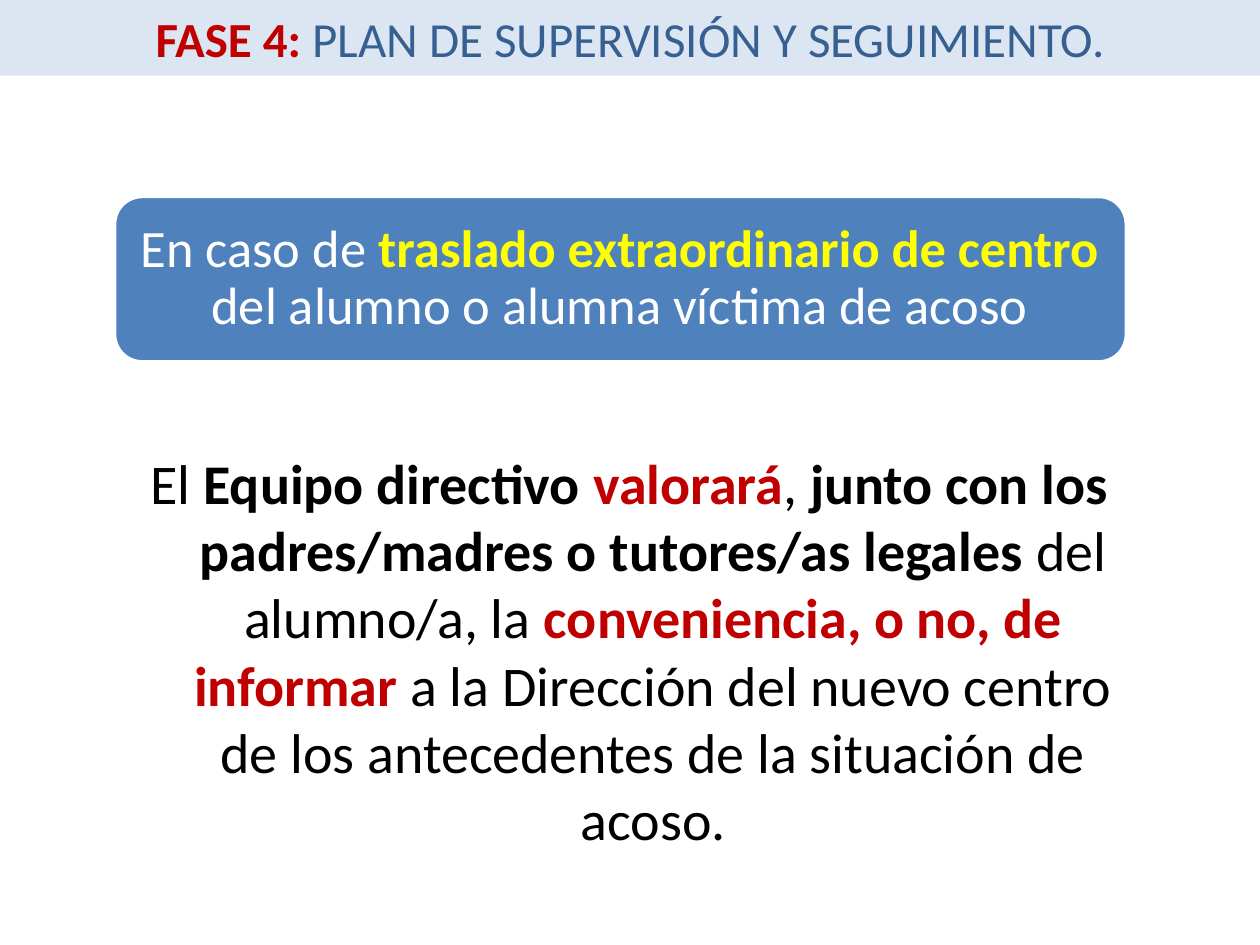
from pptx import Presentation
from pptx.dml.color import RGBColor as RGB
from pptx.enum.shapes import MSO_SHAPE as Kind
from pptx.enum.text import MSO_ANCHOR as Anchor, PP_ALIGN as Align
from pptx.util import Inches, Pt

WHITE = RGB(0xFF, 0xFF, 0xFF)
BLACK = RGB(0x00, 0x00, 0x00)
RED = RGB(0xC0, 0x00, 0x00)
YELLOW = RGB(0xFF, 0xFF, 0x00)
PALE = RGB(0xDC, 0xE6, 0xF2)
NAVY = RGB(0x37, 0x60, 0x92)
BLUE = RGB(0x4F, 0x81, 0xBD)
WIDE, HIGH = Inches(10), Inches(7.5)


class Deck:
    font = "Calibri"

    def __init__(self):
        self.prs = Presentation()
        self.prs.slide_width, self.prs.slide_height = WIDE, HIGH
        self.slide = self.prs.slides.add_slide(self.prs.slide_layouts[6])

    def place(self, x, y, w, h):
        return [int(part * size / 100) for part, size in zip((x, y, w, h), (WIDE, HIGH) * 2)]

    def panel(self, kind, area, fill, edge=None):
        shape = self.slide.shapes.add_shape(kind, *self.place(*area))
        shape.shadow.inherit = False
        shape.fill.solid()
        shape.fill.fore_color.rgb = fill
        if edge:
            shape.line.color.rgb = edge
            shape.line.width = Pt(2)
        else:
            shape.line.fill.background()
        return shape

    def label(self, area):
        return self.slide.shapes.add_textbox(*self.place(*area))

    def prose(self, shape, size, runs, frame={}, para={}, hang=0):
        box = shape.text_frame
        line = box.paragraphs[0]
        for item, look in ((box, {"word_wrap": True, **frame}),
                           (line, {"alignment": Align.CENTER, **para})):
            for name, value in look.items():
                setattr(item, name, value)
        if hang:
            props = line._p.get_or_add_pPr()
            props.set("marL", str(Inches(hang)))
            props.set("indent", str(-Inches(hang)))
        for text, color, bold in runs:
            run = line.add_run()
            run.text = text
            look = {"name": self.font, "size": Pt(size), "bold": bold}
            for name, value in look.items():
                setattr(run.font, name, value)
            run.font.color.rgb = color


def main():
    deck = Deck()
    middle = {"vertical_anchor": Anchor.MIDDLE}

    body = deck.label((10.6, 46.8, 78.7, 45.6))
    deck.prose(body, 32, [
        ("El ", BLACK, False),
        ("Equipo directivo ", BLACK, True),
        ("valorará", RED, True),
        (", ", BLACK, False),
        ("junto con los padres/madres o tutores/as legales ", BLACK, True),
        ("del alumno/a, la ", BLACK, False),
        ("conveniencia, o no, de informar ", RED, True),
        ("a la Dirección del nuevo centro de los antecedentes "
         "de la situación de acoso.", BLACK, False),
    ], para={"space_before": Pt(6.4)}, hang=0.38)

    title = deck.panel(Kind.RECTANGLE, (0, 0, 100, 8), PALE)
    deck.prose(title, 28, [
        ("FASE 4: ", RED, True),
        ("PLAN DE SUPERVISIÓN Y SEGUIMIENTO.", NAVY, False),
    ], middle)

    deck.panel(Kind.ROUNDED_RECTANGLE, (9.1, 20.8, 80.3, 17.5), BLUE, WHITE)
    sides = ("left", "right", "top", "bottom")
    inset = {f"margin_{side}": Inches(0.12) for side in sides}
    case = deck.label((9.7, 21.7, 79, 15.7))
    deck.prose(case, 30, [
        ("En caso de ", WHITE, False),
        ("traslado extraordinario de centro ", YELLOW, True),
        ("del alumno o alumna víctima de acoso", WHITE, False),
    ], {**middle, **inset}, {"line_spacing": 0.9, "space_after": Pt(10.5)})

    deck.prs.save("out.pptx")


if __name__ == "__main__":
    main()
